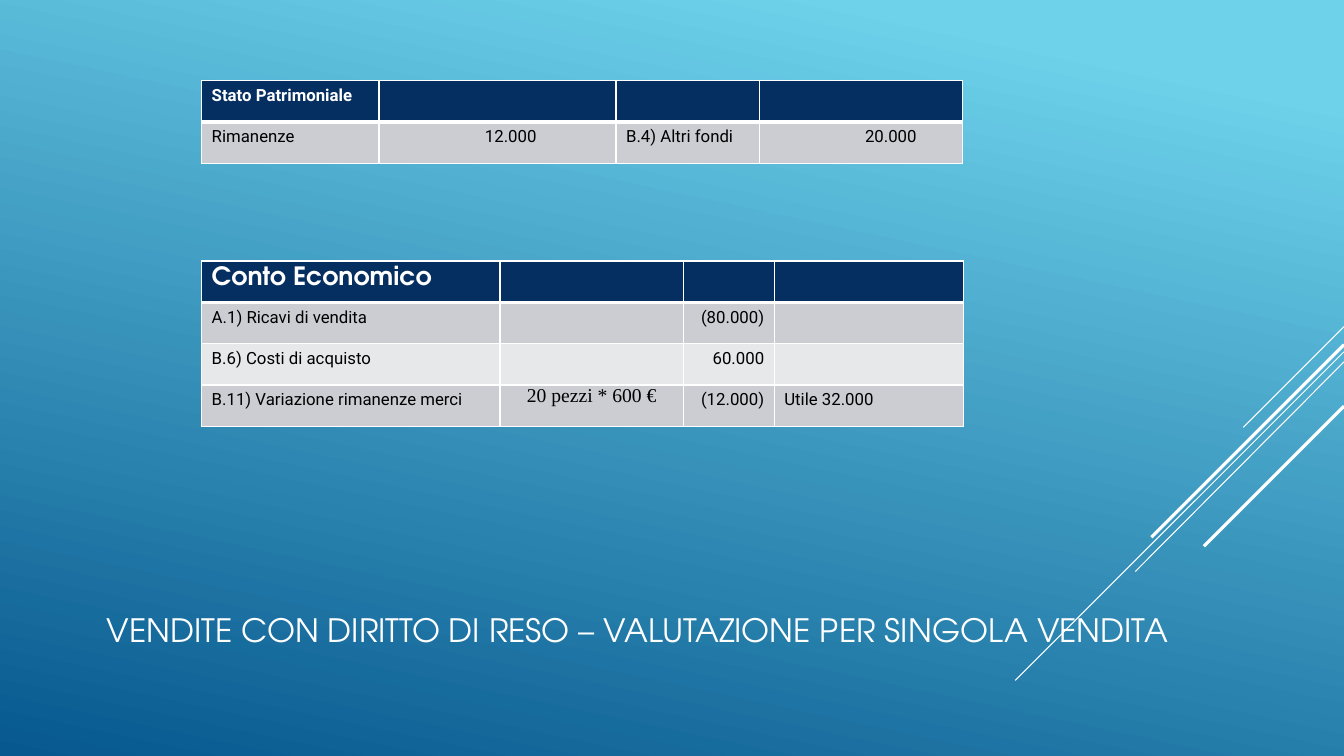
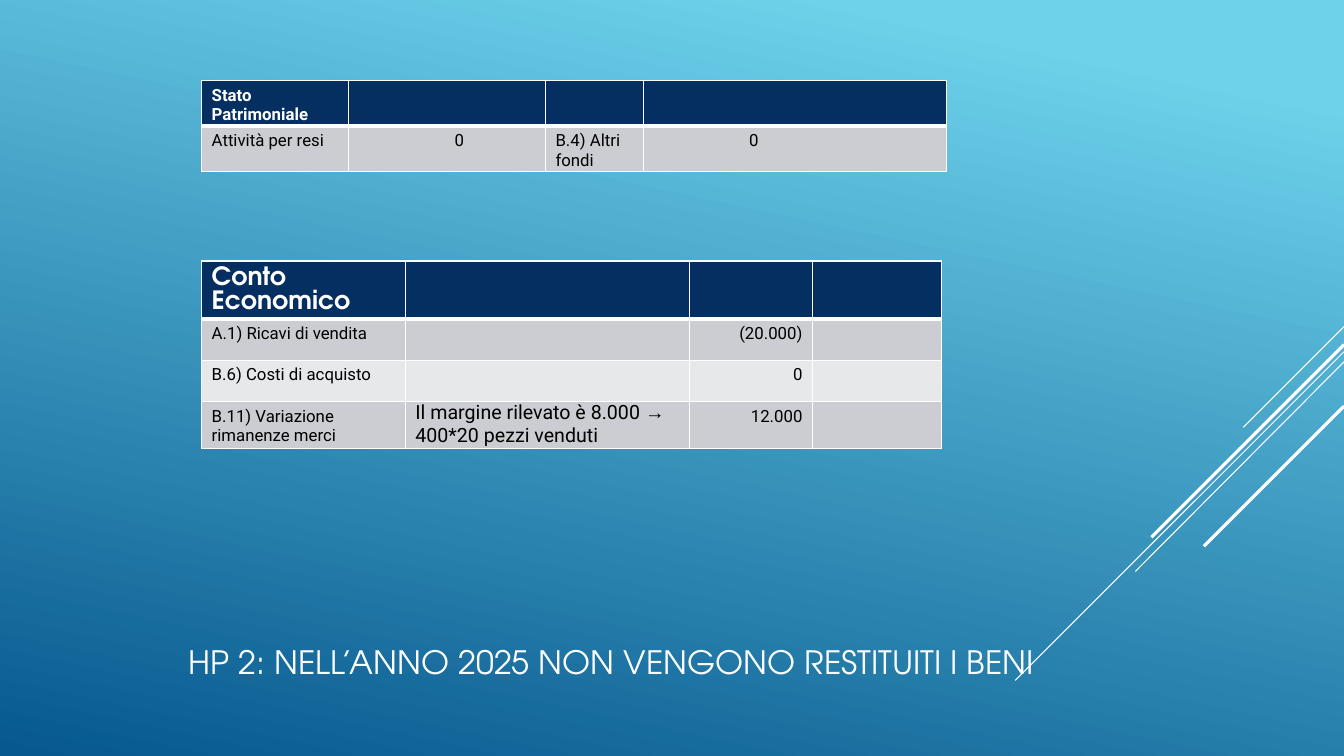
from lxml import etree
from pptx import Presentation
from pptx.dml.color import RGBColor
from pptx.enum.shapes import MSO_CONNECTOR
from pptx.enum.text import MSO_ANCHOR, PP_ALIGN
from pptx.oxml.ns import qn
from pptx.util import Inches, Pt

LEFT, MID, RIGHT = PP_ALIGN.LEFT, PP_ALIGN.CENTER, PP_ALIGN.RIGHT
CENTER = MSO_ANCHOR.MIDDLE
LINE = MSO_CONNECTOR.STRAIGHT

HUES = {
    "sky": "6ED2EB",
    "deep": "06588E",
    "navy": "052F61",
    "gray": "CCCDD2",
    "pale": "E7E8EA",
    "white": "FFFFFF",
    "black": "000000",
}
HEAD_FONT, BODY_FONT = "TeX Gyre Adventor", "Roboto"
WIDE, HIGH = 13.33, 7.5
ROW = 0.41
RAYS = [
    (3.24, 12.33, 4.24, 0.75),
    (3.49, 10.07, 6.75, 0.75),
    (3.59, 11.26, 5.67, 0.75),
    (3.42, 11.42, 5.33, 2.25),
    (4.03, 11.94, 5.42, 2.25),
]
STYLES = {
    "label": (0.1, 0.05, 0, LEFT, 12, BODY_FONT),
    "value": (1.05, 0.05, 0, LEFT, 12, BODY_FONT),
    "sum": (0, 0.05, 0.1, RIGHT, 12, BODY_FONT),
    "note": (0.1, 0, 0, LEFT, 14, BODY_FONT),
    "count": (0, 0, 0, MID, 14, "Times New Roman"),
    "head": (0.1, 0.05, 0.1, LEFT, 18, HEAD_FONT),
}
TOP_KINDS = ["label", "value", "label", "value"]
LOW_KINDS = ["label", "note", "sum", "label"]


def hue(name):
    return RGBColor.from_string(HUES[name])


def set_font(font, face, size, color, bold=False):
    font.name, font.size, font.bold = face, Pt(size), bold
    font.color.rgb = hue(color)


def add_base(deck):
    slide = deck.slides.add_slide(deck.slide_layouts[6])
    fill = slide.background.fill
    fill.gradient()
    fill.gradient_angle = 258
    for stop, place, name in zip(fill.gradient_stops, (0.1, 1), ("sky", "deep")):
        stop.position = place
        stop.color.rgb = hue(name)
    for top, x, y, width in RAYS:
        ray = slide.shapes.add_connector(
            LINE, Inches(WIDE), Inches(top), Inches(x), Inches(y))
        ray.line.color.rgb = hue("white")
        ray.line.width = Pt(width)
        etree.SubElement(ray._element.spPr, qn("a:effectLst"))
    return slide


def add_title(slide, box, text, indent=0):
    frame = slide.shapes.add_textbox(*map(Inches, box)).text_frame
    frame.word_wrap = True
    frame.vertical_anchor = CENTER
    frame.margin_left = Inches(0.1 + indent)
    para = frame.paragraphs[0]
    para.text = text
    para.alignment = MID
    set_font(para.font, HEAD_FONT, 23, "white")


def add_edges(cell, top, base):
    props = cell._tc.get_or_add_tcPr()
    for side, width in (("L", 1), ("R", 1), ("T", top), ("B", base)):
        edge = etree.SubElement(props, qn("a:ln" + side), w=str(Pt(width)))
        fill = etree.SubElement(edge, qn("a:solidFill"))
        etree.SubElement(fill, qn("a:srgbClr"), val=HUES["white"])


def fill_cell(cell, text, kind, head):
    left, top, right, align, size, face = STYLES[kind]
    cell.margin_left, cell.margin_top = Inches(left), Inches(top)
    cell.margin_right, cell.margin_bottom = Inches(right), 0
    para = cell.text_frame.paragraphs[0]
    para.alignment = align
    set_font(para.font, face, size, "white" if head else "black", head)
    if kind == "head":
        cell.margin_bottom = Inches(0.05)
        para.line_spacing = Pt(17)
    for part in text.partition("→ "):
        if part:
            run = para.add_run()
            run.text = part
            if part == "→ ":
                run.font.name = "Arial"


def add_grid(slide, x, y, cols, kinds, rows, marks):
    frame = slide.shapes.add_table(
        len(rows), len(cols), Inches(x), Inches(y),
        Inches(sum(cols)), Inches(ROW * len(rows)))
    grid = frame.table
    for col, width in zip(grid.columns, cols):
        col.width = Inches(width)
    for r, texts in enumerate(rows):
        grid.rows[r].height = Inches(ROW)
        for c, kind in enumerate(kinds):
            cell = grid.cell(r, c)
            add_edges(cell, 3 if r == 1 else 1, 3 if r == 0 else 1)
            cell.fill.solid()
            shade = "navy" if r == 0 else "gray" if r % 2 else "pale"
            cell.fill.fore_color.rgb = hue(shade)
            text = texts[c] if c < len(texts) else ""
            kind = marks.get((r, c), kind)
            fill_cell(cell, text, kind, r == 0)


def add_sheet(deck, title, top, low):
    slide = add_base(deck)
    add_title(slide, *title)
    cols, items = top
    add_grid(slide, 2, 0.8, cols, TOP_KINDS, [["Stato Patrimoniale"], items], {})
    cols, sales, costs, stock, marks = low
    rows = [
        ["Conto Economico"],
        ["A.1) Ricavi di vendita", "", sales],
        ["B.6) Costi di acquisto", "", costs],
        ["B.11) Variazione rimanenze merci", *stock],
    ]
    add_grid(slide, 2, 2.59, cols, LOW_KINDS, rows, {(0, 0): "head", **marks})


def main():
    deck = Presentation()
    deck.slide_width, deck.slide_height = Inches(WIDE), Inches(HIGH)
    add_sheet(
        deck,
        ((0.78, 5.97, 11.1, 0.55),
         "VENDITE CON DIRITTO DI RESO – VALUTAZIONE PER SINGOLA VENDITA"),
        ([1.76, 2.35, 1.42, 2.02],
         ["Rimanenze", "12.000", "B.4) Altri fondi", "20.000"]),
        ([2.96, 1.82, 0.9, 1.88], "(80.000)", "60.000",
         ["20 pezzi * 600 €", "(12.000)", "Utile 32.000"], {(3, 1): "count"}),
    )
    add_sheet(
        deck,
        ((0.78, 6.32, 10.07, 0.49),
         "HP 2: NELL’ANNO 2025 NON VENGONO RESTITUITI I BENI", 0.51),
        ([1.46, 1.95, 0.97, 3.01],
         ["Attività per resi", "0", "B.4) Altri fondi", "0"]),
        ([2.02, 2.82, 1.22, 1.28], "(20.000)", "0",
         ["Il margine rilevato è 8.000 → 400*20 pezzi venduti", "12.000"], {}),
    )
    deck.save("out.pptx")


if __name__ == "__main__":
    main()
